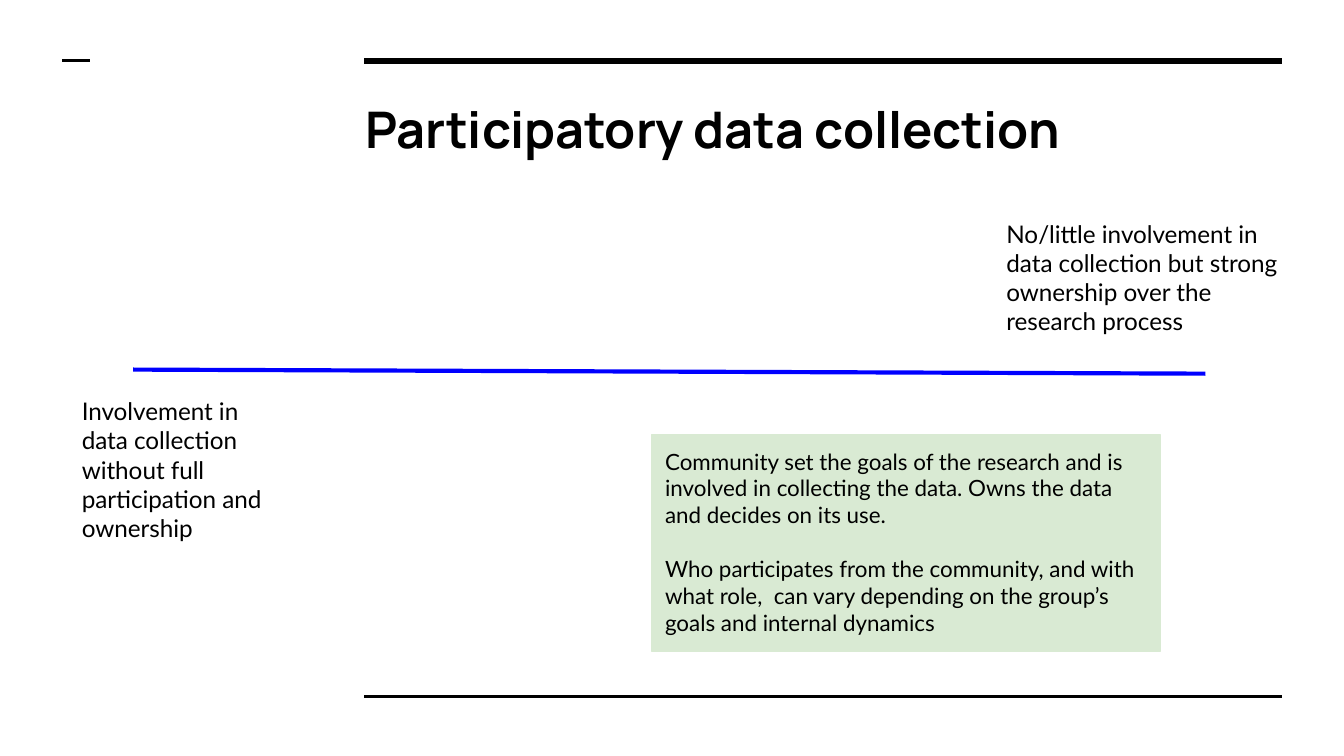
from dataclasses import dataclass

from lxml import etree
from pptx import Presentation
from pptx.dml.color import RGBColor
from pptx.enum import shapes, text
from pptx.oxml.ns import qn
from pptx.util import Pt


@dataclass(frozen=True)
class Theme:
    ink: str = "000000"
    scale: str = "0000FF"
    panel: str = "D9EAD3"
    heading_font: str = "Manrope"
    body_font: str = "Lato"
    title_size: float = 27
    label_size: float = 13
    panel_size: float = 12
    inset: float = 7.2


THEME = Theme()
PAGE_SIZE = (720, 405)
TITLE = "Participatory data collection"
TITLE_AREA = (188.6, 45.4, 497.5, 49.7)

# start x, start y, end x, end y, colour, weight
RULES = [
    (195.1, 32.6, 686.9, 32.6, THEME.ink, 3),
    (195.1, 373, 686.9, 373, THEME.ink, 1.5),
    (33.5, 32.6, 48, 32.6, THEME.ink, 1.5),
    (71.3, 198, 645.8, 200.2, THEME.scale, 2.25),
]
LABELS = [
    ("Involvement in data collection without full participation and ownership",
     (36.7, 205.2, 126, 92.4)),
    ("No/little involvement in data collection but strong ownership over the "
     "research process", (532.1, 110.2, 170.6, 77.8)),
]
PANEL_AREA = (349.2, 232.6, 272.2, 116.6)
PANEL_TEXT = [
    "Community set the goals of the research and is involved in collecting "
    "the data. Owns the data and decides on its use.",
    "Who participates from the community, and with what role,  can vary "
    "depending on the group’s goals and internal dynamics",
]


def points(values):
    return [Pt(value) for value in values]


def colour(value):
    return RGBColor.from_string(value)


def write(box, paragraphs, font, size, gap=0, bold=False):
    """Fill a box with left-aligned paragraphs, gap points apart."""
    frame = box.text_frame
    frame.word_wrap = True
    frame.vertical_anchor = text.MSO_ANCHOR.TOP
    frame.margin_left = frame.margin_right = Pt(THEME.inset)
    frame.margin_top = frame.margin_bottom = Pt(THEME.inset)
    for index, words in enumerate(paragraphs):
        para = frame.add_paragraph() if index else frame.paragraphs[0]
        para.alignment = text.PP_ALIGN.LEFT
        para.line_spacing = 1.0
        para.space_before = Pt(gap if index else 0)
        span = para.add_run()
        span.text = words
        span.font.name = font
        span.font.size = Pt(size)
        span.font.bold = bold
        span.font.color.rgb = colour(THEME.ink)


def add_rule(page, ends, line_colour, weight):
    rule = page.shapes.add_connector(shapes.MSO_CONNECTOR.STRAIGHT, *points(ends))
    rule.line.color.rgb = colour(line_colour)
    rule.line.width = Pt(weight)
    etree.SubElement(rule._element.spPr, qn("a:effectLst"))


def add_title(page):
    title = page.shapes.title
    title.left, title.top, title.width, title.height = points(TITLE_AREA)
    write(title, [TITLE], THEME.heading_font, THEME.title_size, bold=True)
    title.text_frame.auto_size = text.MSO_AUTO_SIZE.NONE


def add_label(page, words, area):
    label = page.shapes.add_textbox(*points(area))
    write(label, [words], THEME.body_font, THEME.label_size)
    label.text_frame.auto_size = text.MSO_AUTO_SIZE.SHAPE_TO_FIT_TEXT


def add_panel(page):
    panel = page.shapes.add_shape(shapes.MSO_SHAPE.RECTANGLE, *points(PANEL_AREA))
    panel.shadow.inherit = False
    panel.fill.solid()
    panel.fill.fore_color.rgb = colour(THEME.panel)
    panel.line.color.rgb = colour(THEME.panel)
    panel.line.width = Pt(0.75)
    write(panel, PANEL_TEXT, THEME.body_font, THEME.panel_size,
          gap=THEME.panel_size * 1.2)
    panel.text_frame.auto_size = text.MSO_AUTO_SIZE.SHAPE_TO_FIT_TEXT


def main():
    deck = Presentation()
    deck.slide_width, deck.slide_height = points(PAGE_SIZE)
    page = deck.slides.add_slide(deck.slide_layouts.get_by_name("Title Only"))
    add_title(page)
    for *ends, line_colour, weight in RULES:
        add_rule(page, ends, line_colour, weight)
    for words, area in LABELS:
        add_label(page, words, area)
    add_panel(page)
    deck.save("out.pptx")


if __name__ == "__main__":
    main()
